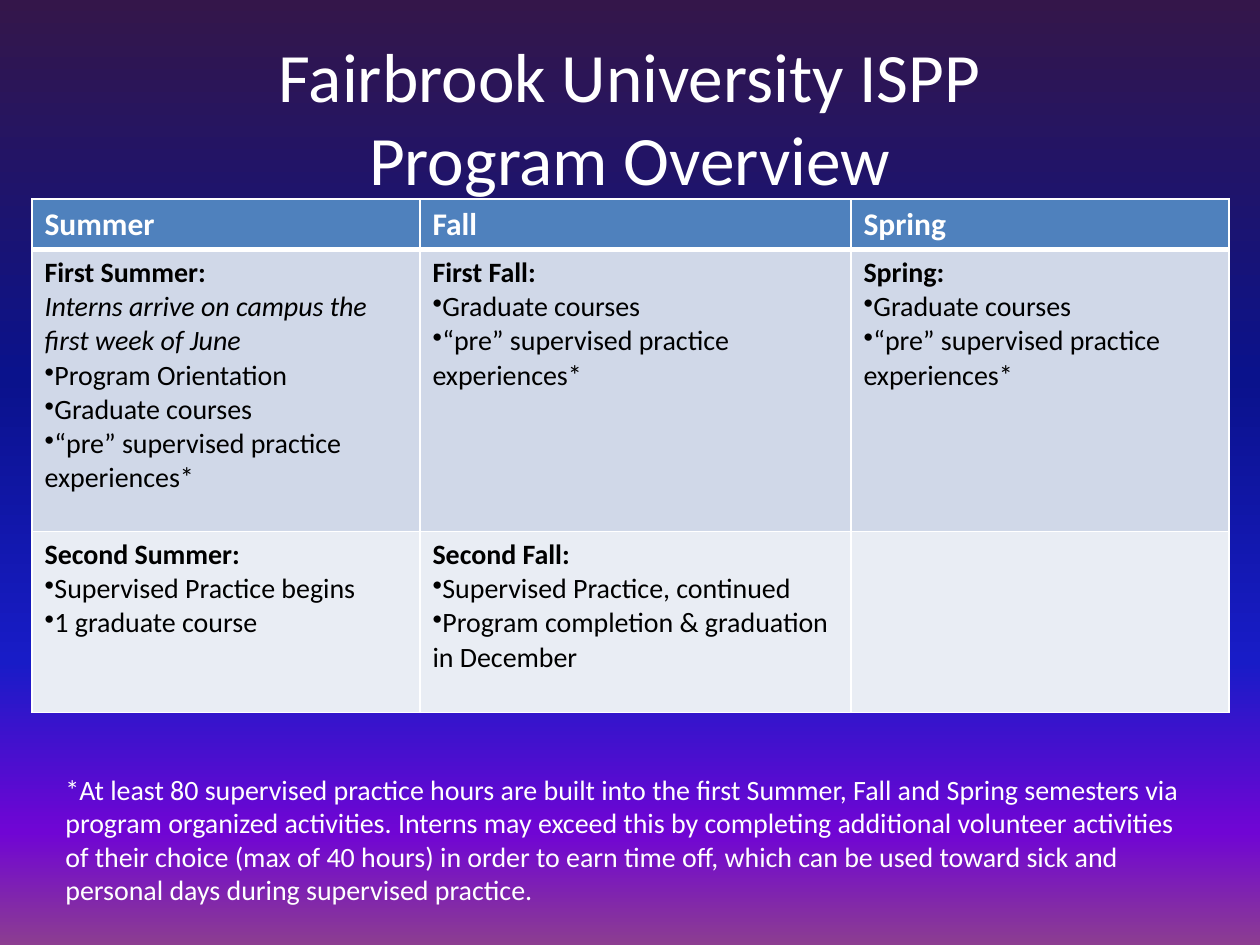
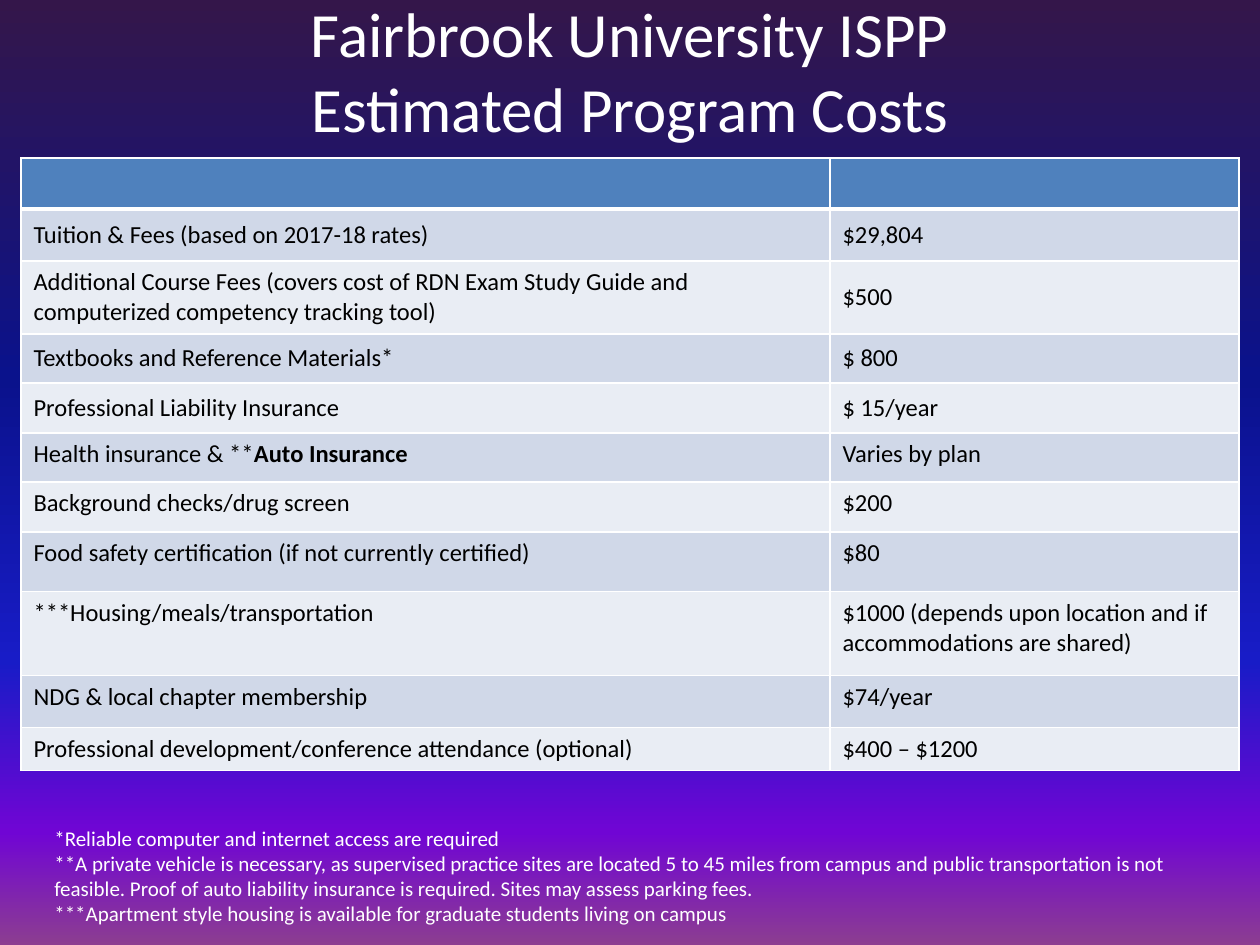
"""Build two slides on a supervised practice program: its terms and its costs."""
import pptx
import pptx.dml.color
import pptx.enum.text
import pptx.oxml.ns
import pptx.util
import lxml.etree

PX = 914400 // 126
WIDE, HIGH = 1260, 945
FONT = "Calibri"
INK = {"white": "FFFFFF", "black": "000000", "head": "4F81BD",
       "odd": "D0D8E8", "even": "E9EDF4"}
SKY = [(0, "34164A"), (40, "0A128C"), (70, "181CC7"), (88, "7005D4"), (100, "8C3D91")]
MID = pptx.enum.text.MSO_ANCHOR.MIDDLE
TOP = pptx.enum.text.MSO_ANCHOR.TOP
SCHOOL = "Fairbrook University ISPP"


def bold(text):
    return [(text, "b")]


COURSE = ["•Graduate courses", "•“pre” supervised practice experiences*"]

SLIDES = [
    {
        "title": {"lines": [SCHOOL, "Program Overview"], "size": 39.6,
                  "box": (63, 38, 1134, 157)},
        "table": {
            "at": (32, 199), "size": 16, "cols": [388, 431, 378],
            "rows": [50, 282, 181], "middle": [],
            "cells": [
                [[bold("Summer")], [bold("Fall")], [bold("Spring")]],
                [[bold("First Summer:"),
                  [("Interns arrive on campus the first week of June", "i")],
                  "•Program Orientation", *COURSE],
                 [bold("First Fall:"), *COURSE],
                 [bold("Spring:"), *COURSE]],
                [[bold("Second Summer:"), "•Supervised Practice begins",
                  "•1 graduate course"],
                 [bold("Second Fall:"), "•Supervised Practice, continued",
                  "•Program completion & graduation in December"],
                 []],
            ],
        },
        "note": {"size": 16, "box": (53, 766, 1155, 186), "paras": [
            "*At least 80 supervised practice hours are built into the first Summer, "
            "Fall and Spring semesters via program organized activities. Interns may "
            "exceed this by completing additional volunteer activities of their choice "
            "(max of 40 hours) in order to earn time off, which can be used toward sick "
            "and personal days during supervised practice."]},
    },
    {
        "title": {"lines": [SCHOOL, "Estimated Program Costs"], "size": 36,
                  "box": (63, 21, 1134, 98)},
        "table": {
            "at": (21, 158), "size": 14, "cols": [809, 409],
            "rows": [51, 52, 73, 49, 50, 49, 50, 60, 84, 52, 43],
            "middle": [1, 2, 3, 4],
            "cells": [
                [[], []],
                [["Tuition & Fees (based on 2017-18 rates)"], ["$29,804"]],
                [["Additional Course Fees (covers cost of RDN Exam Study Guide and "
                  "computerized competency tracking tool)"], ["$500"]],
                [["Textbooks and Reference Materials*"], ["$ 800"]],
                [["Professional Liability Insurance"], ["$ 15/year"]],
                [[[("Health insurance & **", ""), ("Auto Insurance", "b")]],
                 ["Varies by plan"]],
                [["Background checks/drug screen"], ["$200"]],
                [["Food safety certification (if not currently certified)"], ["$80"]],
                [["***Housing/meals/transportation"],
                 ["$1000 (depends upon location and if accommodations are shared)"]],
                [["NDG & local chapter membership"], ["$74/year"]],
                [["Professional development/conference attendance (optional)"],
                 ["$400 – $1200"]],
            ],
        },
        "note": {"size": 12, "box": (42, 819, 1197, 115), "paras": [
            "*Reliable computer and internet access are required",
            "**A private vehicle is necessary, as supervised practice sites are located "
            "5 to 45 miles from campus and public transportation is not feasible. Proof "
            "of auto liability insurance is required. Sites may assess parking fees.",
            "***Apartment style housing is available for graduate students living on "
            "campus"]},
    },
]


def color(name):
    return pptx.dml.color.RGBColor.from_string(INK[name])


def node(owner, tag, **attrs):
    return lxml.etree.SubElement(owner, pptx.oxml.ns.qn(tag), attrs)


def add_run(para, text, size, ink, flags=""):
    run = para.add_run()
    run.text = text
    font = run.font
    font.name, font.size = FONT, pptx.util.Pt(size)
    font.color.rgb = color(ink)
    font.bold, font.italic = "b" in flags, "i" in flags


def write(frame, paras, size, ink):
    for i, item in enumerate(paras):
        para = frame.add_paragraph() if i else frame.paragraphs[0]
        runs = item
        if isinstance(item, str):
            runs = [(item.removeprefix("•"), "")]
            if item.startswith("•"):
                node(para._p.get_or_add_pPr(), "a:buChar", char="•")
        for text, flags in runs:
            add_run(para, text, size, ink, flags)


def add_box(slide, box):
    frame = slide.shapes.add_textbox(*(n * PX for n in box)).text_frame
    frame.word_wrap = True
    return frame


def add_title(slide, lines, size, box):
    frame = add_box(slide, box)
    frame.vertical_anchor = MID
    para = frame.paragraphs[0]
    para.alignment = pptx.enum.text.PP_ALIGN.CENTER
    for i, line in enumerate(lines):
        if i:
            para.add_line_break()
        add_run(para, line, size, "white")


def add_note(slide, paras, size, box):
    frame = add_box(slide, box)
    frame.auto_size = pptx.enum.text.MSO_AUTO_SIZE.SHAPE_TO_FIT_TEXT
    write(frame, paras, size, "white")


def edge(cell, row):
    props = cell._tc.get_or_add_tcPr()
    wide = {"T": 3 if row == 1 else 1, "B": 3 if row == 0 else 1}
    for i, side in enumerate("LRTB"):
        line = node(props, "a:ln" + side, w=str(pptx.util.Pt(wide.get(side, 1))))
        node(node(line, "a:solidFill"), "a:srgbClr", val=INK["white"])
        props.insert(i, line)


def add_table(slide, at, size, cols, rows, middle, cells):
    box = (*at, sum(cols), sum(rows))
    table = slide.shapes.add_table(len(rows), len(cols), *(n * PX for n in box)).table
    for col, wide in zip(table.columns, cols):
        col.width = wide * PX
    for r, (row, high) in enumerate(zip(table.rows, rows)):
        row.height = high * PX
        fill = ("odd" if r % 2 else "even") if r else "head"
        for cell, paras in zip(row.cells, cells[r]):
            cell.fill.solid()
            cell.fill.fore_color.rgb = color(fill)
            cell.vertical_anchor = MID if r in middle else TOP
            edge(cell, r)
            write(cell.text_frame, paras, size if r else 18, "black" if r else "white")


def paint(slide):
    fill = slide.background.fill
    fill.gradient()
    fill.gradient_angle = 270
    stops = next(slide.element.iter(pptx.oxml.ns.qn("a:gsLst")))
    for stop in list(stops):
        stops.remove(stop)
    for pos, tone in SKY:
        node(node(stops, "a:gs", pos=str(pos * 1000)), "a:srgbClr", val=tone)


def main():
    deck = pptx.Presentation()
    deck.slide_width, deck.slide_height = WIDE * PX, HIGH * PX
    for page in SLIDES:
        slide = deck.slides.add_slide(deck.slide_layouts[6])
        paint(slide)
        add_title(slide, **page["title"])
        add_table(slide, **page["table"])
        add_note(slide, **page["note"])
    deck.save("out.pptx")


if __name__ == "__main__":
    main()
